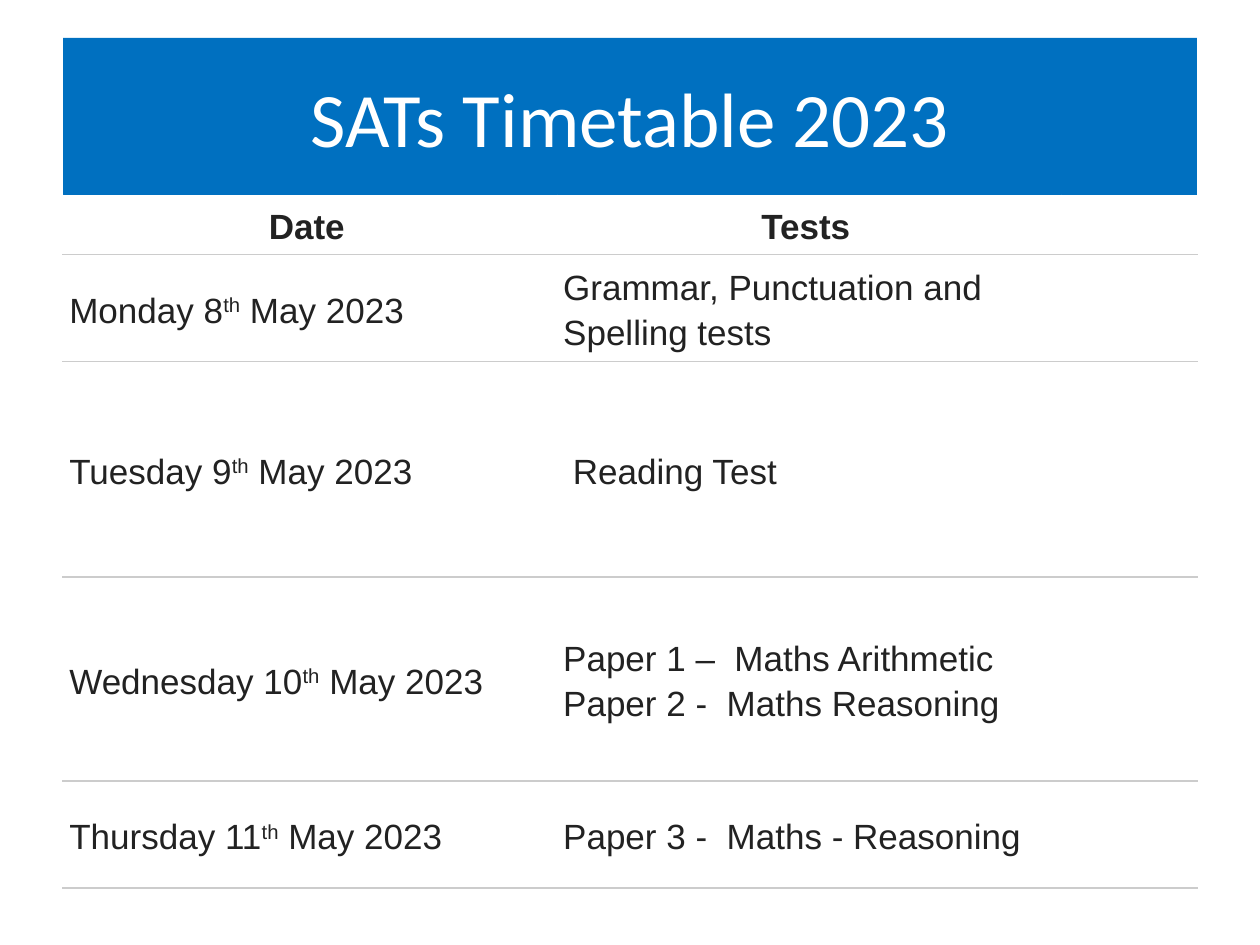
"""Build a one-slide SATs timetable with a title band and a ruled table."""
from pptx import Presentation
from pptx.dml.color import RGBColor
from pptx.enum.text import MSO_ANCHOR as Anchor, PP_ALIGN as Align
from pptx.oxml import parse_xml
from pptx.oxml.ns import nsdecls
from pptx.util import Inches, Pt


def style(font, size, name, colour, bold=False):
    for key, value in {"size": Pt(size), "name": name, "bold": bold}.items():
        setattr(font, key, value)
    font.color.rgb = RGBColor.from_string(colour)


def rule(cell, side, colour):
    cell._tc.get_or_add_tcPr().append(parse_xml(
        f'<a:ln{side} {nsdecls("a")} w="12700"><a:solidFill>'
        f'<a:srgbClr val="{colour}"/></a:solidFill></a:ln{side}>'))


deck = Presentation()
deck.slide_width, deck.slide_height = Inches(10), Inches(7.5)
slide = deck.slides.add_slide(deck.slide_layouts[5])
margin = deck.slide_width // 20
band_top, band_height = Inches(0.3), deck.slide_height // 6
content_width = deck.slide_width - 2 * margin

heading = slide.shapes.title
band = {"left": margin, "top": band_top, "width": content_width, "height": band_height}
for key, value in band.items():
    setattr(heading, key, value)
heading.fill.solid()
heading.fill.fore_color.rgb = RGBColor.from_string("0070C0")
heading.text_frame.text = "SATs Timetable 2023"
heading.text_frame.vertical_anchor = Anchor.MIDDLE
heading.text_frame.paragraphs[0].alignment = Align.CENTER
style(heading.text_frame.paragraphs[0].runs[0].font, 44, "Calibri", "FFFFFF")

schedule = [
    (0.47, "Date", "Tests"),
    (0.85, "Monday 8^th^ May 2023", "Grammar, Punctuation and Spelling tests"),
    (1.71, "Tuesday 9^th^ May 2023", " Reading Test"),
    (1.62, "Wednesday 10^th^ May 2023",
     "Paper 1 –  Maths Arithmetic \nPaper 2 -  Maths Reasoning"),
    (0.85, "Thursday 11^th^ May 2023", "Paper 3 -  Maths - Reasoning"),
]
column_widths = [3.92, 4, 1.08]
timetable = slide.shapes.add_table(
    len(schedule), len(column_widths), margin, band_top + band_height,
    content_width, Inches(sum(row[0] for row in schedule))).table
timetable.first_row = timetable.horz_banding = False
for column, width in zip(timetable.columns, column_widths):
    column.width = Inches(width)

cell_format = {
    "margin_left": Inches(0.05), "margin_right": Inches(0.1),
    "margin_top": Inches(0.04), "margin_bottom": Inches(0.04),
    "vertical_anchor": Anchor.MIDDLE,
}
for r, (height, *entries) in enumerate(schedule):
    timetable.rows[r].height = Inches(height)
    for c, entry in enumerate(entries + [""]):
        cell = timetable.cell(r, c)
        for key, value in cell_format.items():
            setattr(cell, key, value)
        for side in "LRTB":
            grey = side == "B" or (side == "T" and r > 0)
            rule(cell, side, "CCCCCC" if grey else "FFFFFF")
        cell.fill.background()
        line = cell.text_frame.paragraphs[0]
        line.alignment = Align.LEFT if r else Align.CENTER
        line.line_spacing, line.space_after = 1.15, Pt(16.8)
        for n, row_text in enumerate(entry.split("\n") if entry else []):
            if n:
                line.add_line_break()
            for k, part in enumerate(row_text.split("^")):
                run = line.add_run()
                run.text = part
                style(run.font, 20, "Arial", "222222", bold=r == 0)
                if k % 2:
                    run.font._element.set("baseline", "30000")

deck.save("out.pptx")
